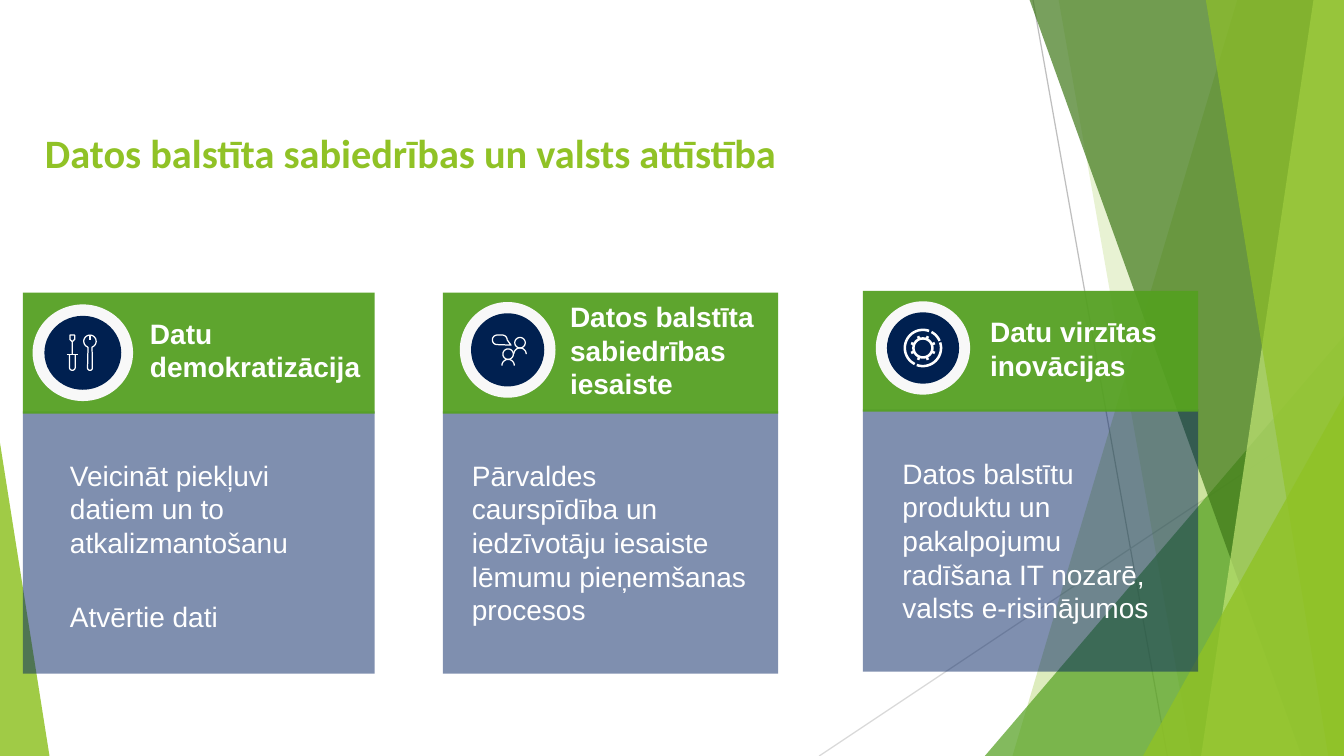
from dataclasses import dataclass
from math import cos, radians, sin

from lxml.etree import SubElement
from pptx import Presentation
from pptx.dml.color import RGBColor
from pptx.enum.shapes import MSO_CONNECTOR, MSO_SHAPE
from pptx.enum.text import MSO_ANCHOR, PP_ALIGN
from pptx.oxml.ns import qn
from pptx.util import Cm, Pt

RECT, OVAL, TRIANGLE = MSO_SHAPE.RECTANGLE, MSO_SHAPE.OVAL, MSO_SHAPE.ISOSCELES_TRIANGLE
STRAIGHT = MSO_CONNECTOR.STRAIGHT
TOP, MIDDLE, LEFT = MSO_ANCHOR.TOP, MSO_ANCHOR.MIDDLE, PP_ALIGN.LEFT
W, H = 28.22, 15.88


@dataclass(frozen=True)
class Theme:
    lime: str = "90C226"
    green: str = "54A021"
    forest: str = "3F7819"
    pale: str = "C0E474"
    navy: str = "002060"
    disc: str = "002050"
    ring: str = "F8F8F8"
    white: str = "FFFFFF"
    gray: str = "BFBFBF"
    light_gray: str = "D9D9D9"
    title_font: str = "Calibri"
    font: str = "Arial"
    title_size: float = 24
    size: float = 16.7
    paragraph_gap: float = 24


T = Theme()


# Basic elements, all lengths in centimetres
def paint(shape, color, alpha=100):
    shape.shadow.inherit = False
    shape.line.fill.background()
    shape.fill.solid()
    shape.fill.fore_color.rgb = RGBColor.from_string(color)
    if alpha < 100:
        clr = shape.element.spPr.find(".//" + qn("a:srgbClr"))
        SubElement(clr, qn("a:alpha")).set("val", str(alpha * 1000))


def block(s, kind, x, y, w, h, color, alpha=100, adj=None):
    sp = s.shapes.add_shape(kind, Cm(x), Cm(y), Cm(w), Cm(h))
    if adj is not None:
        sp.adjustments[0] = adj
    paint(sp, color, alpha)


def outline(s, points, closed=False):
    pts = [(Cm(x), Cm(y)) for x, y in points]
    fb = s.shapes.build_freeform(*pts[0])
    fb.add_line_segments(pts[1:], close=closed)
    sp = fb.convert_to_shape()
    sp.shadow.inherit = False
    return sp


def line(s, x1, y1, x2, y2, color, width):
    c = s.shapes.add_connector(STRAIGHT, Cm(x1), Cm(y1), Cm(x2), Cm(y2))
    c.line.color.rgb = RGBColor.from_string(color)
    c.line.width = Pt(width)
    SubElement(c.element.spPr, qn("a:effectLst"))


def write(tf, text, font=T.font, size=T.size, color=T.white, bold=False,
          anchor=TOP, inset=None, gap=0):
    tf.word_wrap = True
    tf.vertical_anchor = anchor
    if inset is not None:
        tf.margin_left = tf.margin_right = tf.margin_top = tf.margin_bottom = Cm(inset)
    for i, part in enumerate(text.split("\n")):
        p = tf.add_paragraph() if i else tf.paragraphs[0]
        p.alignment = LEFT
        p.space_before = Pt(gap if i else 0)
        r = p.add_run()
        r.text = part
        r.font.name, r.font.size, r.font.bold = font, Pt(size), bold
        r.font.color.rgb = RGBColor.from_string(color)


def text_box(s, x, y, w, h, text, **fmt):
    write(s.shapes.add_textbox(Cm(x), Cm(y), Cm(w), Cm(h)).text_frame, text, **fmt)


# Backdrop of translucent blades
def blade(s, top_x, bottom_x, color, alpha):
    paint(outline(s, [(top_x, 0), (W, 0), (W, H), (bottom_x, H)], closed=True), color, alpha)


def backdrop(s):
    line(s, 21.69, 0, 24.51, H, T.gray, 0.75)
    line(s, W, 8.53, 17.2, H, T.light_gray, 0.75)
    blade(s, 25.98, 21.26, T.lime, 30)
    blade(s, 22.23, 25.02, T.lime, 20)
    block(s, TRIANGLE, 20.68, 7.06, 7.54, 8.82, T.green, 72, adj=1)
    blade(s, 21.62, 27.33, T.forest, 70)
    blade(s, 27.58, 25.22, T.pale, 70)
    blade(s, 25.32, 27.89, T.lime, 65)
    block(s, TRIANGLE, 24, 8.31, 4.22, 7.57, T.lime, 80, adj=1)
    block(s, TRIANGLE, 0, 9.3, 1.04, 6.58, T.lime, 85, adj=0)


# Icons: strokes around the badge centre
def arc(x, y, r, start, end, steps=24):
    angles = [radians(start + (end - start) * i / steps) for i in range(steps + 1)]
    return [(x + r * cos(a), y + r * sin(a)) for a in angles]


def tools_icon():
    return [
        [(-0.22, 0.03), (-0.22, -0.23), (-0.27, -0.28), (-0.27, -0.37),
         (-0.17, -0.37), (-0.17, -0.28), (-0.22, -0.23)],
        [(-0.34, 0.03), (-0.1, 0.03)],
        [(-0.28, 0.03)] + arc(-0.22, 0.31, 0.06, 180, 0) + [(-0.16, 0.03)],
        arc(0.15, -0.24, 0.13, 110, 430) + arc(0.15, 0.32, 0.05, 0, 180) + [(0.11, -0.12)],
        [(0.15, -0.37), (0.15, -0.27)],
    ]


def people_icon():
    strokes = [[(0.07, -0.1)] + arc(-0.22, -0.21, 0.1, 90, 270)
               + arc(-0.11, -0.21, 0.1, 270, 360) + [(0.07, -0.1)]]
    for x, y in [(0.01, 0.09), (0.26, -0.15)]:
        strokes += [arc(x, y, 0.11, 0, 360), arc(x, y + 0.24, 0.13, 180, 360)]
    return strokes


def gear_icon():
    rings = [(0.2, 0, 360), (0.38, 117, 290), (0.38, 298, 337), (0.38, -18, 110)]
    teeth = [arc(0, 0, r, a, a, 1)[0] for a in (22.5 + 45 * i for i in range(8))
             for r in (0.21, 0.27)]
    return [arc(0, 0, *ring) for ring in rings] + list(zip(teeth[::2], teeth[1::2]))


def badge(s, cx, cy, w, h, strokes, width):
    for scale, color in [(1, T.ring), (0.765, T.disc)]:
        bw, bh = w * scale, h * scale
        block(s, OVAL, cx - bw / 2, cy - bh / 2, bw, bh, color)
    for stroke in strokes:
        sp = outline(s, [(cx + x, cy + y) for x, y in stroke])
        sp.fill.background()
        sp.line.color.rgb = RGBColor.from_string(T.white)
        sp.line.width = Pt(width)


# Card: heading band with badge above a text panel
def card(s, x, y, w, heading, heading_w, body, body_x, body_w, icon):
    block(s, RECT, x, y + 2.49, w, 5.51, T.navy, 50)
    block(s, RECT, x, y, w, 2.54, T.green, 94)
    text_box(s, x + 2.52, y - 0.07, heading_w, 2.54, heading,
             bold=True, anchor=MIDDLE, inset=0.15)
    badge(s, *icon)
    text_box(s, x + body_x, y + 3.35, body_w, 3.9, body, gap=T.paragraph_gap)


def main():
    prs = Presentation()
    prs.slide_width, prs.slide_height = Cm(W), Cm(H)
    s = prs.slides.add_slide(prs.slide_layouts[5])
    backdrop(s)

    # Title
    title = s.shapes.title
    title.left, title.top, title.width, title.height = Cm(0.69), Cm(2.57), Cm(25.68), Cm(1.27)
    write(title.text_frame, "Datos balstīta sabiedrības un valsts attīstība",
          font=T.title_font, size=T.title_size, color=T.lime, bold=True)

    # Cards
    cards = [
        (6.15, 7.39, "Datu demokratizācija", 4.72,
         "Veicināt piekļuvi datiem un to atkalizmantošanu\nAtvērtie dati", 0.74, 5.59,
         (1.74, 7.41, 2.11, 2.03, tools_icon(), 0.75)),
        (6.15, 7.04, "Datos balstīta sabiedrības iesaiste", 4.55,
         "Pārvaldes caurspīdība un iedzīvotāju iesaiste lēmumu pieņemšanas procesos", 0.36, 6.32,
         (10.66, 7.35, 2.01, 2.01, people_icon(), 0.75)),
        (6.11, 7.04, "Datu virzītas inovācijas", 4.06,
         "Datos balstītu produktu un pakalpojumu radīšana IT nozarē, valsts e-risinājumos",
         0.58, 5.99, (19.38, 7.31, 1.98, 1.96, gear_icon(), 1.5)),
    ]
    for i, content in enumerate(cards):
        card(s, 0.48 + 8.82 * i, *content)

    prs.save("out.pptx")


if __name__ == "__main__":
    main()
